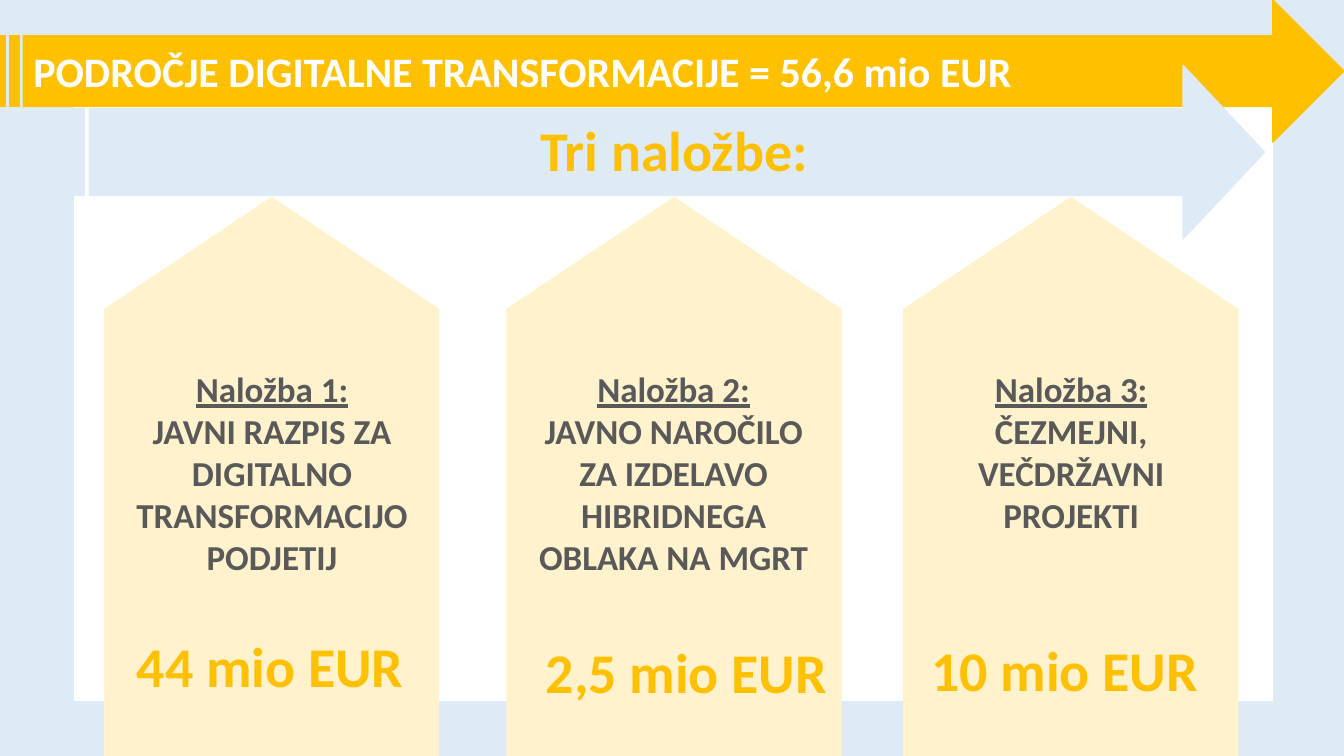
"""Builds the slide on the three investments in digital transformation."""
from pptx import Presentation
from pptx import util as u
from pptx.dml.color import RGBColor
from pptx.enum import shapes, text

WHITE = RGBColor(0xFF, 0xFF, 0xFF)
PALE_BLUE = RGBColor(0xDE, 0xEB, 0xF7)
GOLD = RGBColor(0xFF, 0xC0, 0x00)
CREAM = RGBColor(0xFF, 0xF2, 0xCC)
GREY = RGBColor(0x59, 0x59, 0x59)
FORMS = shapes.MSO_SHAPE


class SlideBuilder:
    def __init__(self, slide):
        self.slide = slide
        self.font = {"name": "Calibri", "bold": True}

    def block(self, form, box, colour, rotation=0):
        block = self.slide.shapes.add_shape(form, *map(u.Cm, box))
        block.shadow.inherit = False
        block.rotation = rotation
        block.fill.solid()
        block.fill.fore_color.rgb = colour
        block.line.color.rgb = colour
        block.line.width = u.Pt(1)
        return block

    def add_words(self, paragraph, words, size, colour, **extra):
        run = paragraph.add_run()
        run.text = words
        for key, value in {**self.font, "size": u.Pt(size), **extra}.items():
            setattr(run.font, key, value)
        run.font.color.rgb = colour

    def label(self, box):
        frame = self.slide.shapes.add_textbox(*map(u.Cm, box)).text_frame
        frame.word_wrap = True
        frame.auto_size = text.MSO_AUTO_SIZE.SHAPE_TO_FIT_TEXT
        return frame

    def headline(self, box, words):
        self.add_words(self.label(box).paragraphs[0], words, 40, GOLD)

    def banner(self, box, words):
        banner = self.block(FORMS.STRIPED_RIGHT_ARROW, box, GOLD)
        banner.text_frame.vertical_anchor = text.MSO_ANCHOR.MIDDLE
        paragraph = banner.text_frame.paragraphs[0]
        paragraph.alignment = text.PP_ALIGN.LEFT
        self.add_words(paragraph, words, 30, WHITE)

    def description(self, box, heading, body):
        frame = self.label(box)
        for paragraph, words, underline in (
            (frame.paragraphs[0], heading, True),
            (frame.add_paragraph(), body, False),
        ):
            paragraph.alignment = text.PP_ALIGN.CENTER
            self.add_words(paragraph, words, 25, GREY, underline=underline)


def main():
    deck = Presentation()
    deck.slide_width, deck.slide_height = u.Cm(33.87), u.Cm(19.05)
    page = SlideBuilder(deck.slides.add_slide(deck.slide_layouts[6]))

    page.block(FORMS.RECTANGLE, (0, 0, 33.87, 19.05), PALE_BLUE)
    page.block(FORMS.FLOWCHART_PROCESS, (1.88, 1.65, 30.18, 16), WHITE)
    page.banner((0.03, 0, 33.84, 3.58), "PODROČJE DIGITALNE TRANSFORMACIJE = 56,6 mio EUR")
    subtitle_arrow = page.block(FORMS.STRIPED_RIGHT_ARROW, (1.57, 1.65, 30.3, 4.37), PALE_BLUE)
    subtitle_arrow.adjustments[1] = 0.47
    page.headline((13.36, 2.79, 7.42, 1.96), "Tri naložbe:")

    investments = (
        (2.64, (2.97, 7.77, 7.75), "JAVNI RAZPIS ZA DIGITALNO TRANSFORMACIJO PODJETIJ",
         (3.2, 15.8), "44 mio EUR"),
        (12.78, (13.18, 7.59, 7.75), "JAVNO NAROČILO ZA IZDELAVO HIBRIDNEGA OBLAKA NA MGRT",
         (13.51, 15.95), "2,5 mio EUR"),
        (22.78, (23.06, 7.87, 6.68), "ČEZMEJNI, VEČDRŽAVNI PROJEKTI",
         (23.22, 15.88), "10 mio EUR"),
    )
    for number, (pillar_left, body_box, purpose, amount_at, amount) in enumerate(investments, 1):
        body_left, body_width, body_height = body_box
        page.block(FORMS.FLOWCHART_OFFPAGE_CONNECTOR, (pillar_left, 4.98, 8.41, 14.07), CREAM, 180)
        page.description((body_left, 9.14, body_width, body_height), f"Naložba {number}:", purpose)
        page.headline((*amount_at, 7.67, 1.96), amount)

    deck.save("out.pptx")


if __name__ == "__main__":
    main()
